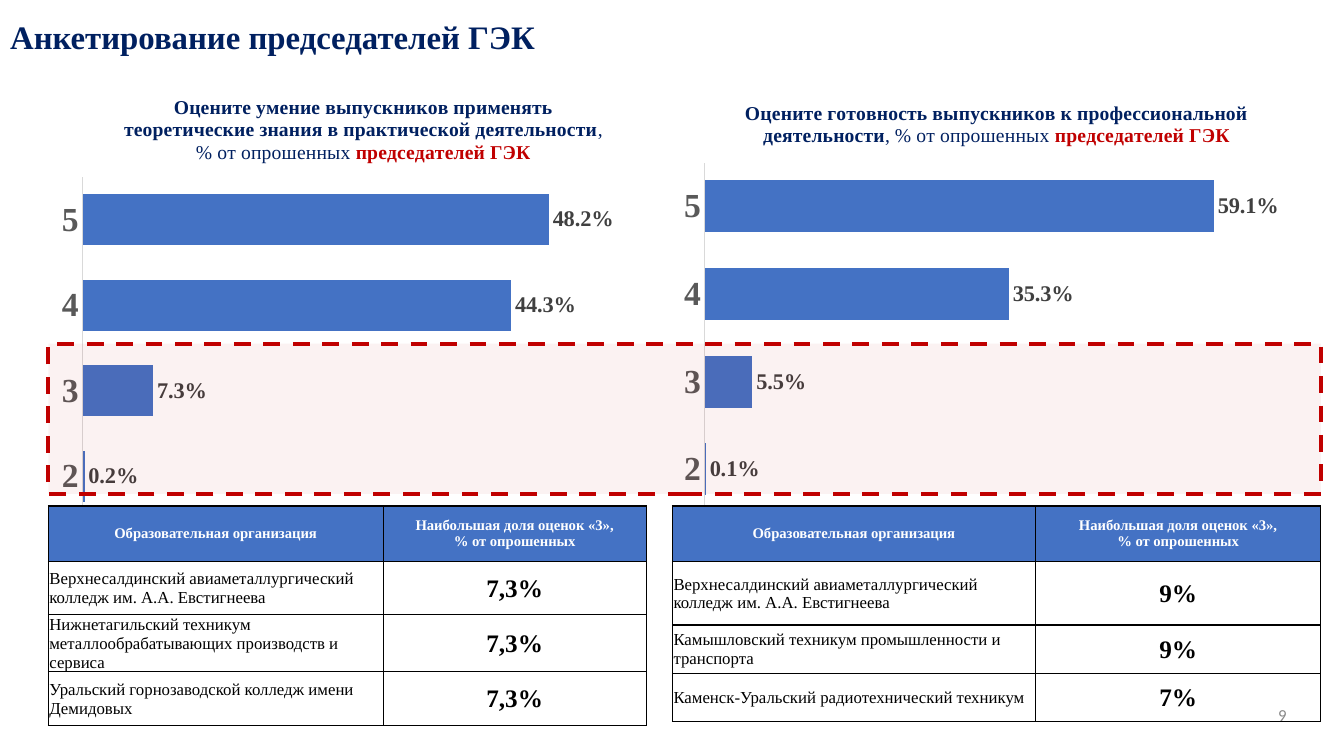
from collections import namedtuple
from lxml.etree import SubElement as Sub
from pptx import Presentation
from pptx.chart.data import CategoryChartData as ChartData
from pptx.dml.color import RGBColor as RGB
from pptx.enum.chart import XL_CHART_TYPE as Kind, XL_LABEL_POSITION as Spot
from pptx.enum.chart import XL_TICK_MARK as Tick
from pptx.enum.dml import MSO_LINE as Dash
from pptx.enum.shapes import MSO_SHAPE as Form
from pptx.enum.text import MSO_ANCHOR as Anchor, MSO_AUTO_SIZE as Fit, PP_ALIGN as Align
from pptx.oxml import parse_xml
from pptx.oxml.ns import nsdecls, qn
from pptx.util import Inches, Pt

CELL = 0.25  # inches per grid column and row
Box = namedtuple("Box", "x y w h")


class Theme:
    serif, sans = "Times New Roman", "Calibri"
    navy, red, blue = "002060", "C00000", "4472C4"
    white, black, grey = "FFFFFF", "000000", "595959"
    dark, pale, rule = "404040", "898989", "D9D9D9"
    title, head, axis, label = 23.4, 14, 24, 16
    top, name, share, page, base = 10.5, 12, 18, 12, 10


def grid(n):
    return Inches(n * CELL)


def place(box):
    return [grid(n) for n in box]


def style(font, size, color, bold=False, name=Theme.serif):
    for key, val in {"name": name, "size": Pt(size), "bold": bold}.items():
        setattr(font, key, val)
    font.color.rgb = RGB.from_string(color)


def paint(fill, color):
    fill.solid()
    fill.fore_color.rgb = RGB.from_string(color)


def write(para, text, align, *look, **more):
    para.alignment = align
    run = para.add_run()
    run.text = text
    style(run.font, *look, **more)


# Slide heading in the title placeholder
def heading(slide, box, text):
    shape = slide.shapes.title
    for key, val in zip(("left", "top", "width", "height"), place(box)):
        setattr(shape, key, val)
    frame = shape.text_frame
    for key, val in {"auto_size": Fit.NONE, "word_wrap": True,
                     "vertical_anchor": Anchor.MIDDLE}.items():
        setattr(frame, key, val)
    para = frame.paragraphs[0]
    para.line_spacing = 0.9
    write(para, text, Align.JUSTIFY, Theme.title, Theme.navy, True)


# Inner plot area, in shares of the chart
def layout(chart, plot):
    area = chart._chartSpace.find(".//" + qn("c:plotArea"))
    for old in area.findall(qn("c:layout")):
        area.remove(old)
    node = parse_xml(f"<c:layout {nsdecls('c')}/>")
    area.insert(0, node)
    hand = Sub(node, qn("c:manualLayout"))
    parts = {"layoutTarget": "inner", "xMode": "edge", "yMode": "edge", **plot._asdict()}
    for key, val in parts.items():
        Sub(hand, qn("c:" + key)).set("val", str(val))


# Bar chart of the marks given
def bars(slide, box, plot, lead, vals, top):
    data = ChartData(number_format="0.0%")
    data.categories = ["2", "3", "4", "5"]
    data.add_series("Доля оценок", vals)
    chart = slide.shapes.add_chart(Kind.BAR_CLUSTERED, *place(box), data).chart
    chart.has_legend = False
    style(chart.font, Theme.base, Theme.black, name=Theme.sans)

    chart.has_title = True
    chart.chart_title.include_in_layout = False
    para = chart.chart_title.text_frame.paragraphs[0]
    for text, color, bold in ((lead, Theme.navy, True),
                              (", % от опрошенных ", Theme.navy, False),
                              ("председателей ГЭК", Theme.red, True)):
        write(para, text, Align.CENTER, Theme.head, color, bold)

    cats, scale = chart.category_axis, chart.value_axis
    cats.major_tick_mark = cats.minor_tick_mark = Tick.NONE
    style(cats.tick_labels.font, Theme.axis, Theme.grey, True)
    paint(cats.format.line.fill, Theme.rule)
    cats.format.line.width = Pt(0.75)
    for key, val in {"visible": False, "has_major_gridlines": False,
                     "minimum_scale": 0, "maximum_scale": top}.items():
        setattr(scale, key, val)

    group = chart.plots[0]
    for key, val in {"gap_width": 68, "vary_by_categories": False,
                     "has_data_labels": True}.items():
        setattr(group, key, val)
    paint(group.series[0].format.fill, Theme.blue)
    marks = group.data_labels
    for key, val in {"show_value": True, "number_format": "0.0%",
                     "number_format_is_linked": False,
                     "position": Spot.OUTSIDE_END}.items():
        setattr(marks, key, val)
    style(marks.font, Theme.label, Theme.dark, True)
    layout(chart, plot)


def border(cell):
    props = cell._tc.get_or_add_tcPr()
    for spot, side in enumerate("LRTB"):
        props.insert(spot, parse_xml(
            f'<a:ln{side} {nsdecls("a")} w="12700"><a:solidFill>'
            f'<a:srgbClr val="{Theme.black}"/></a:solidFill></a:ln{side}>'))


def fill(cell, lines, align, *look):
    cell.vertical_anchor = Anchor.MIDDLE
    frame = cell.text_frame
    for i, line in enumerate(lines):
        para = frame.add_paragraph() if i else frame.paragraphs[0]
        write(para, line, align, *look)
    border(cell)


# Table of colleges with the largest share of mark 3
def ranks(slide, box, highs, rows):
    table = slide.shapes.add_table(len(rows) + 1, 2, *place(box)).table
    table.first_row = table.horz_banding = False
    for col, part in zip(table.columns, (0.56, 0.44)):
        col.width = grid(box.w * part)
    for row, high in zip(table.rows, highs):
        row.height = grid(high)
    heads = (["Образовательная организация"],
             ["Наибольшая доля оценок «3»,", "% от опрошенных"])
    for c, lines in enumerate(heads):
        cell = table.cell(0, c)
        paint(cell.fill, Theme.blue)
        fill(cell, lines, Align.CENTER, Theme.top, Theme.white, True)
    looks = ((Align.LEFT, Theme.name, Theme.black, False),
             (Align.CENTER, Theme.share, Theme.black, True))
    for r, row in enumerate(rows, 1):
        for c, text in enumerate(row):
            cell = table.cell(r, c)
            cell.fill.background()
            for side in ("left", "right", "top"):
                setattr(cell, "margin_" + side, Inches(0.01))
            cell.margin_bottom = 0
            fill(cell, [text], *looks[c])


# Page number
def page(slide, box, text):
    frame = slide.shapes.add_textbox(*place(box)).text_frame
    frame.word_wrap = True
    frame.vertical_anchor = Anchor.MIDDLE
    write(frame.paragraphs[0], text, Align.RIGHT, Theme.page, Theme.pale, name=Theme.sans)


# Dashed frame around the low marks
def focus(slide, box):
    shape = slide.shapes.add_shape(Form.RECTANGLE, *place(box))
    shape.shadow.inherit = False
    paint(shape.fill, Theme.red)
    tint = shape._element.spPr.find(qn("a:solidFill")).find(qn("a:srgbClr"))
    Sub(tint, qn("a:alpha")).set("val", "5000")
    paint(shape.line.fill, Theme.red)
    shape.line.width = Pt(3)
    shape.line.dash_style = Dash.DASH


def main():
    deck = Presentation()
    deck.slide_width, deck.slide_height = Inches(13.33), Inches(7.5)
    slide = deck.slides.add_slide(deck.slide_layouts[5])
    heading(slide, Box(0, 0, 53.32, 3.12), "Анкетирование председателей ГЭК")
    bars(slide, Box(2.04, 3.08, 24.76, 17.88), Box(0.05, 0.22, 0.93, 0.76),
         "Оцените умение выпускников применять теоретические знания "
         "в практической деятельности", (0.002, 0.073, 0.443, 0.482), 0.6)
    bars(slide, Box(26.68, 3.32, 25.72, 17.4), Box(0.05, 0.18, 0.93, 0.8),
         "Оцените готовность выпускников к профессиональной деятельности",
         (0.001, 0.055, 0.353, 0.591), 0.7)
    first = "Верхнесалдинский авиаметаллургический колледж им. А.А. Евстигнеева"
    ranks(slide, Box(1.92, 20.08, 23.72, 8.56), (2.2, 2.12, 2.12, 2.12), (
        (first, "7,3%"),
        ("Нижнетагильский техникум металлообрабатывающих производств и сервиса", "7,3%"),
        ("Уральский горнозаводской колледж имени Демидовых", "7,3%")))
    ranks(slide, Box(26.68, 20.08, 25.72, 8.56), (2.2, 2.52, 1.92, 1.92), (
        (first, "9%"),
        ("Камышловский техникум промышленности и транспорта", "9%"),
        ("Каменск-Уральский радиотехнический техникум", "7%")))
    page(slide, Box(39.44, 27.56, 12, 1.6), "9")
    focus(slide, Box(1.92, 13.64, 50.48, 5.96))
    deck.save("out.pptx")


if __name__ == "__main__":
    main()
